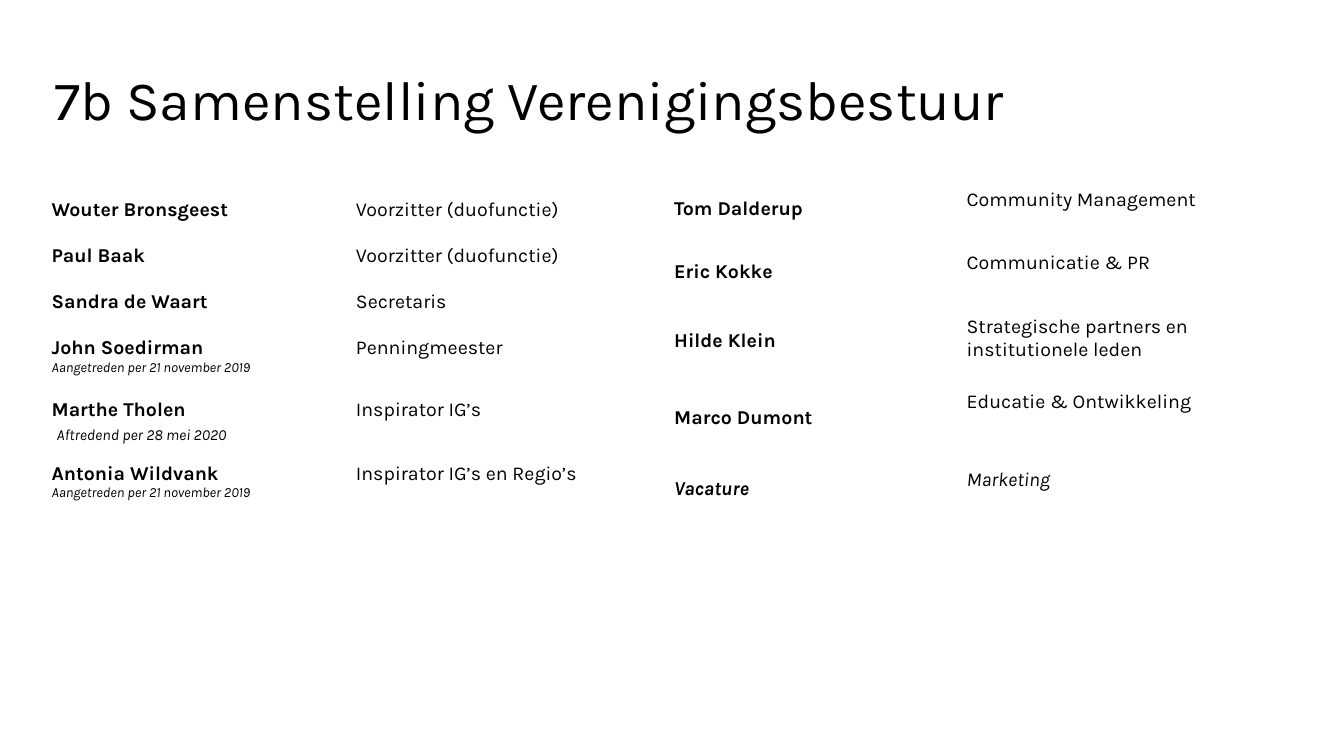
import pptx
import pptx.util
import pptx.dml.color
import pptx.enum.text
import pptx.oxml
import pptx.oxml.ns
from pptx.util import Cm

COLORS = {"text": "000000", "border": "FFFFFF"}
FONT = "Karla"
TITLE_ONLY = 5
ANCHOR = pptx.enum.text.MSO_ANCHOR

# Each member: row height in cm, name, role
OFFICERS = [
    (1.16, "Wouter Bronsgeest", "Voorzitter (duofunctie)"),
    (1.16, "Paul Baak", "Voorzitter (duofunctie)"),
    (1.16, "Sandra de Waart", "Secretaris"),
    (1.56, "John Soedirman", "Penningmeester"),
    (1.61, "Marthe Tholen", "Inspirator IG’s"),
    (1.56, "Antonia Wildvank", "Inspirator IG’s en Regio’s"),
]
PORTFOLIOS = [
    (1.6, "Tom Dalderup", "Community Management"),
    (1.6, "Eric Kokke", "Communicatie & PR"),
    (1.88, "Hilde Klein", "Strategische partners en institutionele leden"),
    (1.98, "Marco Dumont", "Educatie & Ontwikkeling"),
    (1.6, "Vacature", "Marketing"),
]
# Remarks under a name: text, size, indent in cm, space before in points
REMARKS = {
    "John Soedirman": ("Aangetreden per 21 november 2019", 10, 0, 0),
    "Marthe Tholen": ("Aftredend per 28 mei 2020", 11, 0.13, 3.5),
    "Antonia Wildvank": ("Aangetreden per 21 november 2019", 10, 0, 0),
}
VACANT = "Vacature"


def format_font(para, size, bold=False, italic=False):
    font = para.font
    font.name = FONT
    font.size = pptx.util.Pt(size)
    font.bold = bold
    font.italic = italic
    font.color.rgb = pptx.dml.color.RGBColor.from_string(COLORS["text"])


def set_borders(cell, bottom_points):
    properties = cell._tc.get_or_add_tcPr()
    widths = {"lnL": 1, "lnR": 1, "lnT": 1, "lnB": bottom_points}
    for position, (side, points) in enumerate(widths.items()):
        line = pptx.oxml.parse_xml(
            f'<a:{side} {pptx.oxml.ns.nsdecls("a")} w="{pptx.util.Pt(points)}">'
            f'<a:solidFill><a:srgbClr val="{COLORS["border"]}"/></a:solidFill>'
            f'</a:{side}>')
        properties.insert(position, line)


def fill_cell(cell, text, bold, italic, bottom_points):
    cell.margin_left = cell.margin_right = Cm(0.18)
    cell.margin_top = cell.margin_bottom = 0
    cell.vertical_anchor = ANCHOR.TOP
    cell.fill.background()
    set_borders(cell, bottom_points)
    para = cell.text_frame.paragraphs[0]
    para.text = text
    format_font(para, 14, bold, italic)


def add_remark(cell, text, size, indent, space_before):
    para = cell.text_frame.add_paragraph()
    para.text = text
    para._p.get_or_add_pPr().set("marL", str(Cm(indent)))
    para.space_before = pptx.util.Pt(space_before)
    format_font(para, size, italic=True)


def add_members(page, members, left, top, widths, name_anchor, name_margin):
    height = sum(member[0] for member in members)
    frame = page.shapes.add_table(len(members), 2, Cm(left), Cm(top),
                                  Cm(sum(widths)), Cm(height))
    table = frame.table
    table.first_row = table.horz_banding = False
    for column, width in zip(table.columns, widths):
        column.width = Cm(width)
    for index, (row_height, name, role) in enumerate(members):
        table.rows[index].height = Cm(row_height)
        name_cell, role_cell = table.cell(index, 0), table.cell(index, 1)
        italic = name == VACANT
        bottom_points = 3 if index == 0 else 1
        fill_cell(name_cell, name, True, italic, bottom_points)
        fill_cell(role_cell, role, False, italic, bottom_points)
        name_cell.vertical_anchor = name_anchor
        name_cell.margin_bottom = Cm(name_margin)
        if name in REMARKS:
            add_remark(name_cell, *REMARKS[name])


def set_title(page, text):
    title = page.shapes.title
    title.left, title.top = Cm(1.12), Cm(0.79)
    title.width, title.height = Cm(25.45), Cm(2.67)
    title.text_frame.vertical_anchor = ANCHOR.BOTTOM
    para = title.text_frame.paragraphs[0]
    para.text = text
    para.alignment = pptx.enum.text.PP_ALIGN.LEFT
    para.line_spacing = 0.9
    format_font(para, 39.6)


def main():
    deck = pptx.Presentation()
    deck.slide_width, deck.slide_height = Cm(33.87), Cm(19.05)
    page = deck.slides.add_slide(deck.slide_layouts[TITLE_ONLY])

    set_title(page, "7b Samenstelling Verenigingsbestuur")

    # Officers on the left, portfolio holders on the right
    add_members(page, OFFICERS, 1.12, 5, (7.67, 6.53), ANCHOR.TOP, 0)
    add_members(page, PORTFOLIOS, 16.81, 4.75, (7.37, 6.27),
                ANCHOR.MIDDLE, 0.58)

    deck.save("out.pptx")


if __name__ == "__main__":
    main()
